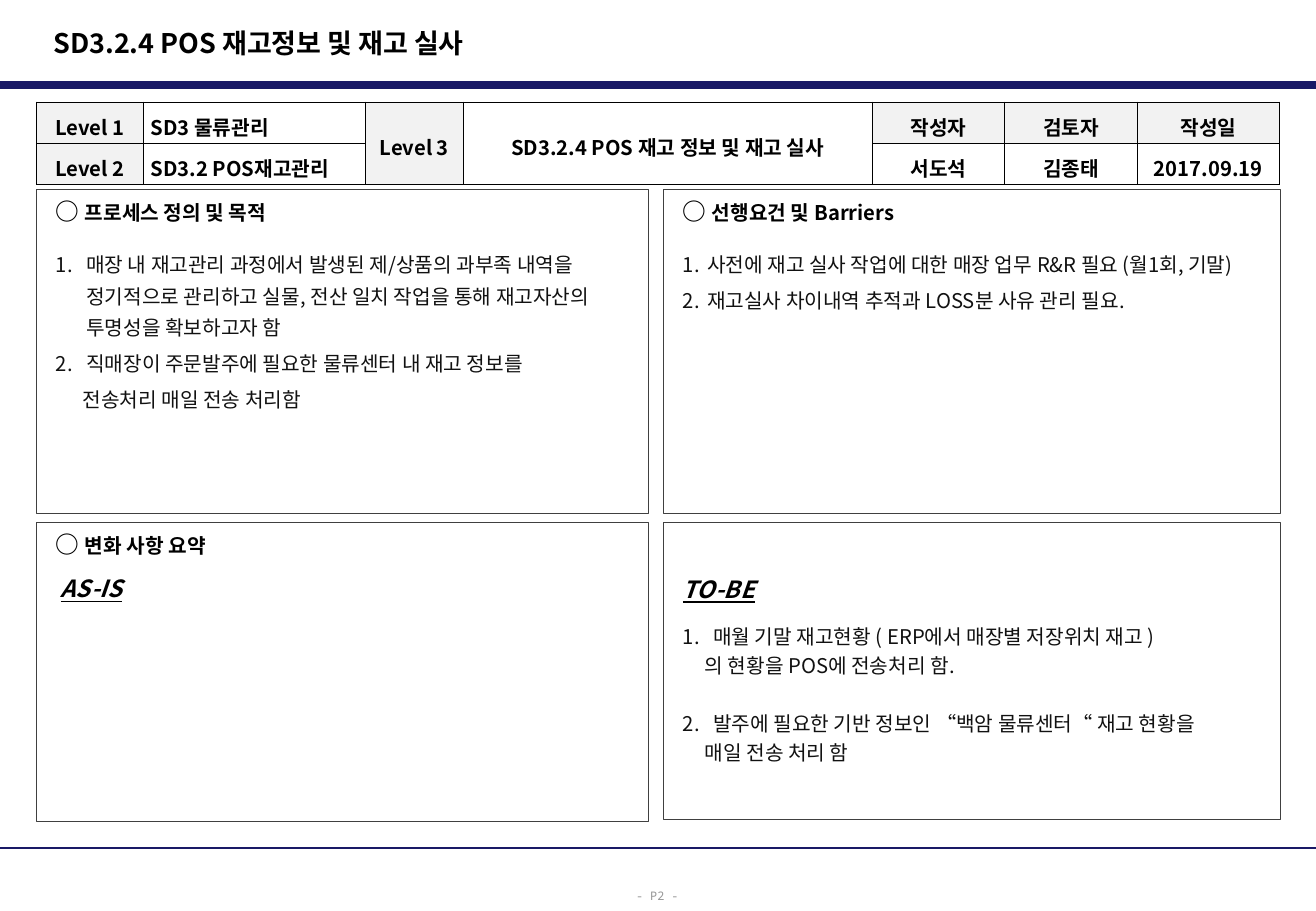
from lxml import etree
from pptx import Presentation
from pptx.dml.color import RGBColor
from pptx.enum import shapes, text
from pptx.oxml import ns
from pptx.util import Inches, Pt

FONT, MONO = "Noto Sans CJK KR", "Noto Sans Mono"
BLACK, INK, NAVY, GREY = "000000", "111111", "191966", "F2F2F2"
LEFT, CENTER = text.PP_ALIGN.LEFT, text.PP_ALIGN.CENTER
HEADING_LINE, ITEM_LINE, CHANGE_LINE = 17.5, 18.7, 17.2


def rgb(value):
    return RGBColor.from_string(value)


def add_run(p, words, size=12, color=BLACK, bold=False, slanted=False, font=FONT):
    r = p.add_run()
    r.text = words
    f = r.font
    f.size, f.bold, f.italic, f.underline = Pt(size), bold, slanted, slanted
    f.color.rgb = rgb(color)
    f.name = font
    etree.SubElement(r._r.get_or_add_rPr(), ns.qn("a:ea")).set("typeface", font)


def add_paragraph(tf, line=None, before=0, left=0, number=None, align=LEFT):
    """Start a paragraph; a numbered one hangs its number in the left indent."""
    p = tf.paragraphs[0]
    if p.runs:
        p = tf.add_paragraph()
    pPr = p._p.get_or_add_pPr()
    pPr.set("marL", str(Inches(left)))
    pPr.set("indent", str(-Inches(left) if number else 0))
    if number:
        bullet = etree.SubElement(pPr, ns.qn("a:buFont"))
        bullet.set("typeface", FONT)
        bullet = etree.SubElement(pPr, ns.qn("a:buAutoNum"))
        bullet.set("type", "arabicPeriod")
        if number > 1:
            bullet.set("startAt", str(number))
    else:
        etree.SubElement(pPr, ns.qn("a:buNone"))
    p.alignment = align
    p.space_before, p.space_after = Pt(before), Pt(0)
    if line:
        p.line_spacing = Pt(line)
    return p


def set_frame(tf, insets, anchor):
    tf.word_wrap = True
    tf.auto_size = text.MSO_AUTO_SIZE.NONE
    tf.vertical_anchor = anchor
    tf.margin_left, tf.margin_top, tf.margin_right, tf.margin_bottom = map(Inches, insets)


def place(sp, left, top, width, height):
    sp.left, sp.top, sp.width, sp.height = map(Inches, (left, top, width, height))


def add_rule(s, y, weight):
    c = s.shapes.add_connector(shapes.MSO_CONNECTOR.STRAIGHT,
                               0, Inches(y), Inches(10.83), Inches(y))
    c.line.color.rgb, c.line.width = rgb(NAVY), Pt(weight)
    etree.SubElement(c._element.spPr, ns.qn("a:effectLst"))


def set_panel(sp, box, top_inset=0.05):
    place(sp, *box)
    sp.line.color.rgb, sp.line.width = rgb("404040"), Pt(0.5)
    set_frame(sp.text_frame, (0.16, top_inset, 0.1, 0.05), text.MSO_ANCHOR.TOP)
    return sp.text_frame


def add_heading(tf, words):
    p = add_paragraph(tf, HEADING_LINE)
    add_run(p, "○ ", 14, bold=True)
    add_run(p, words, bold=True)


def add_label(tf, words, before=0, left=0):
    p = add_paragraph(tf, HEADING_LINE, before, left)
    add_run(p, words, 14, bold=True, slanted=True)


def add_items(tf, items, line):
    """Each item is (words, number or None, left indent, space before)."""
    for words, number, left, before in items:
        add_run(add_paragraph(tf, line, before, left, number), words, color=INK)


def set_borders(cell):
    tcPr = cell._tc.get_or_add_tcPr()
    for i, side in enumerate(("lnL", "lnR", "lnT", "lnB")):
        ln = etree.Element(ns.qn("a:" + side), w=str(Pt(0.5)))
        fill = etree.SubElement(ln, ns.qn("a:solidFill"))
        etree.SubElement(fill, ns.qn("a:srgbClr")).set("val", BLACK)
        tcPr.insert(i, ln)


def add_info_table(s):
    widths = (0.88, 1.83, 0.8, 3.37, 1.09, 1.09, 1.17)
    rows = (("Level 1", "SD3 물류관리", "Level 3", "SD3.2.4 POS 재고 정보 및 재고 실사",
             "작성자", "검토자", "작성일"),
            ("Level 2", "SD3.2 POS재고관리", "", "", "서도석", "김종태", "2017.09.19"))
    shaded = {(0, 0), (1, 0), (0, 2), (1, 2), (0, 4), (0, 5), (0, 6)}
    table = s.shapes.add_table(2, 7, Inches(0.3), Inches(0.84),
                               Inches(sum(widths)), Inches(0.68)).table
    table.first_row = table.horz_banding = False
    for column, width in zip(table.columns, widths):
        column.width = Inches(width)
    for i, row in enumerate(rows):
        for j, words in enumerate(row):
            cell = table.cell(i, j)
            cell.vertical_anchor = text.MSO_ANCHOR.MIDDLE
            cell.margin_left = cell.margin_right = Inches(0.06)
            cell.margin_top, cell.margin_bottom = Inches(0.05), Inches(0.01)
            if (i, j) in shaded:
                cell.fill.solid()
                cell.fill.fore_color.rgb = rgb(GREY)
            else:
                cell.fill.background()
            set_borders(cell)
            if words:
                p = add_paragraph(cell.text_frame, ITEM_LINE,
                                  align=LEFT if j == 1 else CENTER)
                add_run(p, words, bold=True)
    for j in (2, 3):
        table.cell(0, j).merge(table.cell(1, j))


def main():
    prs = Presentation()
    prs.slide_width, prs.slide_height = Inches(10.83), Inches(7.5)
    s = prs.slides.add_slide(prs.slide_layouts[4])
    title, purpose, changes, barriers, to_be = s.placeholders

    # Rules and page number
    add_rule(s, 0.7, 4.5)
    add_rule(s, 6.98, 1.5)
    sp = s.shapes.add_textbox(Inches(4.91), Inches(7.25), Inches(1), Inches(0.25))
    set_frame(sp.text_frame, (0, 0, 0, 0), text.MSO_ANCHOR.MIDDLE)
    add_run(add_paragraph(sp.text_frame, align=CENTER), "- P2 -", 7, "969696", font=MONO)

    # Title and process information
    place(title, 0.34, 0.16, 7.11, 0.38)
    set_frame(title.text_frame, (0.1, 0.05, 0.1, 0.05), text.MSO_ANCHOR.MIDDLE)
    add_run(add_paragraph(title.text_frame), "SD3.2.4 POS 재고정보 및 재고 실사", 16, bold=True)
    add_info_table(s)

    # Definition and purpose
    tf = set_panel(purpose, (0.3, 1.56, 5.04, 2.67))
    add_heading(tf, "프로세스 정의 및 목적")
    add_items(tf, (
        ("매장 내 재고관리 과정에서 발생된 제/상품의 과부족 내역을 정기적으로 관리하고 실물, "
         "전산 일치 작업을 통해 재고자산의 투명성을 확보하고자 함", 1, 0.25, 12),
        ("직매장이 주문발주에 필요한 물류센터 내 재고 정보를", 1, 0.25, 2.6),
        ("전송처리 매일 전송 처리함", None, 0.22, 2.6)), ITEM_LINE)

    # Prerequisites and barriers
    tf = set_panel(barriers, (5.46, 1.56, 5.08, 2.67))
    add_heading(tf, "선행요건 및 Barriers")
    add_items(tf, (
        ("사전에 재고 실사 작업에 대한 매장 업무 R&R 필요 (월1회, 기말)", 1, 0.2, 12),
        ("재고실사 차이내역 추적과 LOSS분 사유 관리 필요.", 1, 0.2, 2.6)), ITEM_LINE)

    # Summary of changes: as-is and to-be
    tf = set_panel(changes, (0.3, 4.3, 5.04, 2.46))
    add_heading(tf, "변화 사항 요약")
    add_label(tf, "AS-IS", before=8.8, left=0.04)

    tf = set_panel(to_be, (5.46, 4.3, 5.08, 2.45), top_inset=0.42)
    add_label(tf, "TO-BE")
    add_items(tf, (
        ("매월 기말 재고현황 ( ERP에서 매장별 저장위치 재고 )", 1, 0.25, 9.6),
        ("의 현황을 POS에 전송처리 함.", None, 0.18, 0),
        ("발주에 필요한 기반 정보인 “백암 물류센터“ 재고 현황을", 2, 0.25, 17.2),
        ("매일 전송 처리 함", None, 0.18, 0)), CHANGE_LINE)

    prs.save("out.pptx")


if __name__ == "__main__":
    main()
